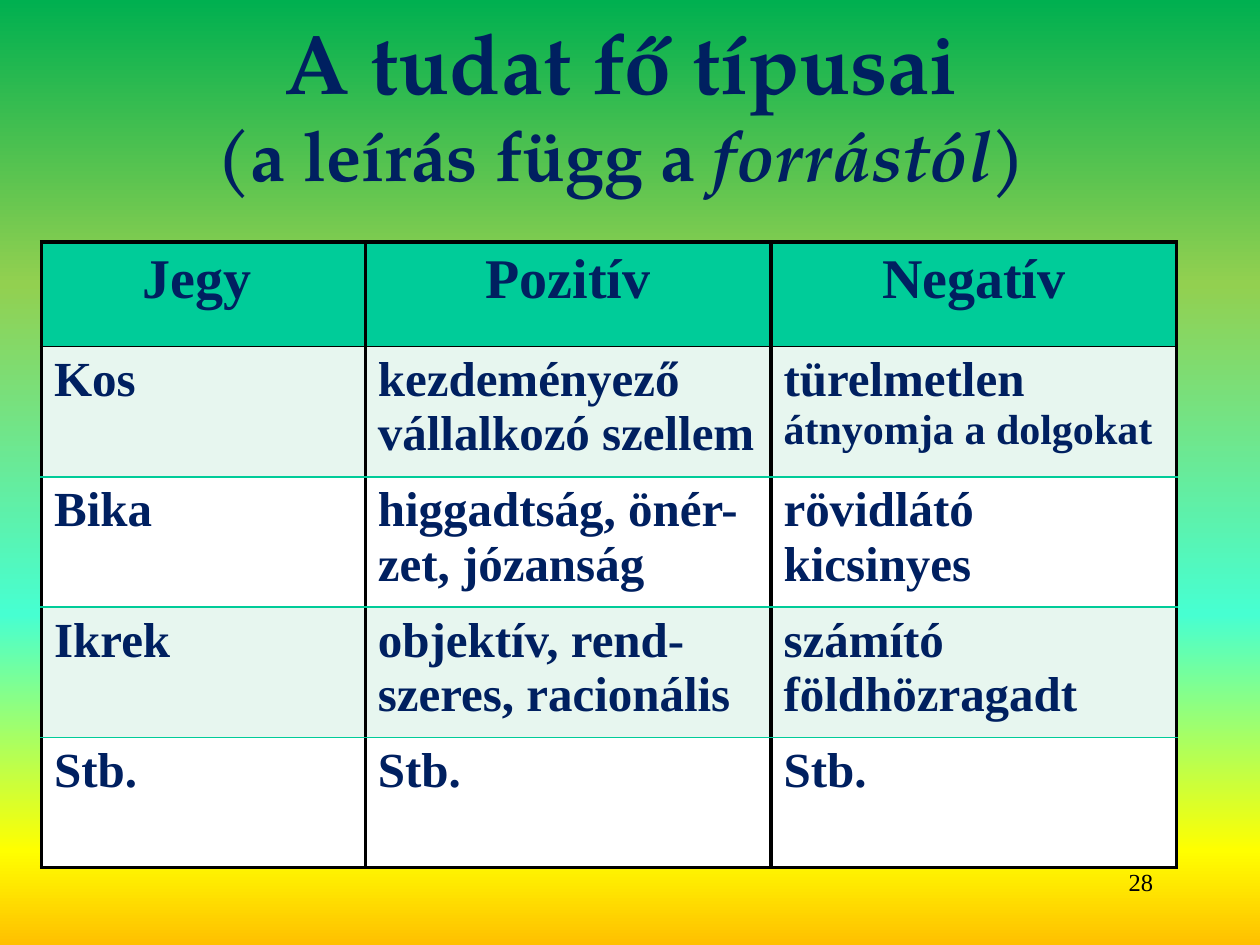
"""Build a slide that sets out the main types of consciousness by zodiac sign."""

from dataclasses import dataclass

from lxml import etree
from pptx import Presentation
from pptx.dml.color import RGBColor
from pptx.enum.text import MSO_ANCHOR, PP_ALIGN
from pptx.oxml.ns import qn
from pptx.util import Inches, Pt

LEFT, CENTER, RIGHT = PP_ALIGN.LEFT, PP_ALIGN.CENTER, PP_ALIGN.RIGHT
TOP, MIDDLE = MSO_ANCHOR.TOP, MSO_ANCHOR.MIDDLE


@dataclass(frozen=True)
class Theme:
    title_font: str = "TeX Gyre Pagella"
    body_font: str = "Times New Roman"
    navy: str = "002060"
    black: str = "000000"
    green: str = "00CC99"
    mint: str = "E7F6EF"
    white: str = "FFFFFF"
    title: int = 48
    subtitle: int = 40
    header: int = 32
    body: int = 28
    small: int = 24
    number: int = 14
    thick: float = 2.25
    thin: float = 1
    backdrop: tuple = (
        (0, "00B050"), (30, "92D050"), (65, "47FFD1"), (90, "FFFF00"), (100, "FFC000"),
    )


THEME = Theme()


@dataclass(frozen=True)
class Span:
    text: str
    size: int = THEME.body
    font: str = THEME.body_font
    color: str = THEME.navy
    bold: bool = True
    italic: bool = False


@dataclass(frozen=True)
class Box:
    left: float
    top: float
    width: float
    height: float


@dataclass(frozen=True)
class Edge:
    color: str
    width: float


FRAME = Edge(THEME.black, THEME.thick)
HEADER_RULE = Edge(THEME.black, THEME.thin)
ROW_RULE = Edge(THEME.green, THEME.thin)

TABLE_BOX = Box(0.33, 1.92, 9, 4.96)
COLUMN_WIDTHS = (2.57, 3.22, 3.22)
ROW_HEIGHTS = (0.83, 1.03, 1.03, 1.03, 1.03)
ROW_RULES = (FRAME, HEADER_RULE, ROW_RULE, ROW_RULE, ROW_RULE, FRAME)

HEADER = (
    ((Span("Jegy", THEME.header), Span(" ")),),
    ((Span("Pozitív", THEME.header),),),
    ((Span("Negatív", THEME.header),),),
)
SIGNS = (
    (("Kos",), ("kezdeményező", "vállalkozó szellem"), ("türelmetlen", "átnyomja a dolgokat")),
    (("Bika",), ("higgadtság, önér-", "zet, józanság"), ("rövidlátó", "kicsinyes")),
    (("Ikrek",), ("objektív, rend-", "szeres, racionális"), ("számító", "földhözragadt")),
    (("Stb.",), ("Stb.",), ("Stb.",)),
)
SMALL_LINES = {"átnyomja a dolgokat"}


def add_spans(para, spans: tuple, align) -> None:
    """Add styled runs to a paragraph."""
    para.alignment = align
    for span in spans:
        run = para.add_run()
        run.text = span.text
        run.font.size = Pt(span.size)
        run.font.name = span.font
        run.font.bold = span.bold
        run.font.italic = span.italic
        run.font.color.rgb = RGBColor.from_string(span.color)


def add_text_box(page, box: Box, anchor):
    """Add a wrapping text box and return its first paragraph."""
    shape = page.shapes.add_textbox(
        Inches(box.left), Inches(box.top), Inches(box.width), Inches(box.height)
    )
    shape.text_frame.word_wrap = True
    shape.text_frame.vertical_anchor = anchor
    return shape.text_frame.paragraphs[0]


def paint_backdrop(page) -> None:
    """Fill the page with the vertical gradient."""
    fill = page.background.fill
    fill.gradient()
    fill.gradient_angle = 270
    stops = next(page.element.iter(qn("a:gsLst")))
    for stop in list(stops):
        stops.remove(stop)
    for percent, color in THEME.backdrop:
        stop = etree.SubElement(stops, qn("a:gs"), pos=str(percent * 1000))
        etree.SubElement(stop, qn("a:srgbClr"), val=color)


def add_border(cell, side: str, edge: Edge) -> None:
    """Draw one solid border of a cell."""
    properties = cell._tc.get_or_add_tcPr()
    line = etree.SubElement(properties, qn(f"a:ln{side}"), w=str(int(Pt(edge.width))))
    solid = etree.SubElement(line, qn("a:solidFill"))
    etree.SubElement(solid, qn("a:srgbClr"), val=edge.color)


def fill_cell(cell, lines: tuple, align, color: str, above: Edge, below: Edge) -> None:
    """Give a cell its borders, fill and paragraphs."""
    for side, edge in (("L", FRAME), ("R", FRAME), ("T", above), ("B", below)):
        add_border(cell, side, edge)
    cell.fill.solid()
    cell.fill.fore_color.rgb = RGBColor.from_string(color)
    frame = cell.text_frame
    for index, spans in enumerate(lines):
        para = frame.add_paragraph() if index else frame.paragraphs[0]
        add_spans(para, spans, align)


def body_lines(texts: tuple) -> tuple:
    """Turn the lines of a body cell into spans."""
    return tuple(
        (Span(text, THEME.small if text in SMALL_LINES else THEME.body),) for text in texts
    )


def add_sign_table(page) -> None:
    """Add the table of signs with their positive and negative traits."""
    box = TABLE_BOX
    rows = (HEADER, *(tuple(map(body_lines, sign)) for sign in SIGNS))
    table = page.shapes.add_table(
        len(rows), len(COLUMN_WIDTHS),
        Inches(box.left), Inches(box.top), Inches(box.width), Inches(box.height),
    ).table
    for column, width in zip(table.columns, COLUMN_WIDTHS):
        column.width = Inches(width)
    for row, height in zip(table.rows, ROW_HEIGHTS):
        row.height = Inches(height)
    for index, row in enumerate(rows):
        band = THEME.mint if index % 2 else THEME.white
        color, align = (band, LEFT) if index else (THEME.green, CENTER)
        above, below = ROW_RULES[index:index + 2]
        for column, lines in enumerate(row):
            fill_cell(table.cell(index, column), lines, align, color, above, below)


def add_title(page) -> None:
    """Add the two-line title."""
    para = add_text_box(page, Box(-0.07, 0, 10, 1.63), MIDDLE)
    font = THEME.title_font
    add_spans(para, (Span("A tudat fő típusai", THEME.title, font),), CENTER)
    para.add_line_break()
    subtitle = (
        Span("(a leírás függ a ", THEME.subtitle, font),
        Span("forrástól", THEME.subtitle, font, italic=True),
        Span(")", THEME.subtitle, font),
    )
    add_spans(para, subtitle, CENTER)


def main() -> None:
    """Build and save the deck."""
    deck = Presentation()
    deck.slide_width, deck.slide_height = Inches(10), Inches(7.5)
    page = deck.slides.add_slide(deck.slide_layouts[6])
    paint_backdrop(page)
    add_title(page)
    add_sign_table(page)
    number = Span("28", THEME.number, color=THEME.black, bold=False)
    add_spans(add_text_box(page, Box(7.17, 6.83, 2.08, 0.5), TOP), (number,), RIGHT)
    deck.save("out.pptx")


if __name__ == "__main__":
    main()
